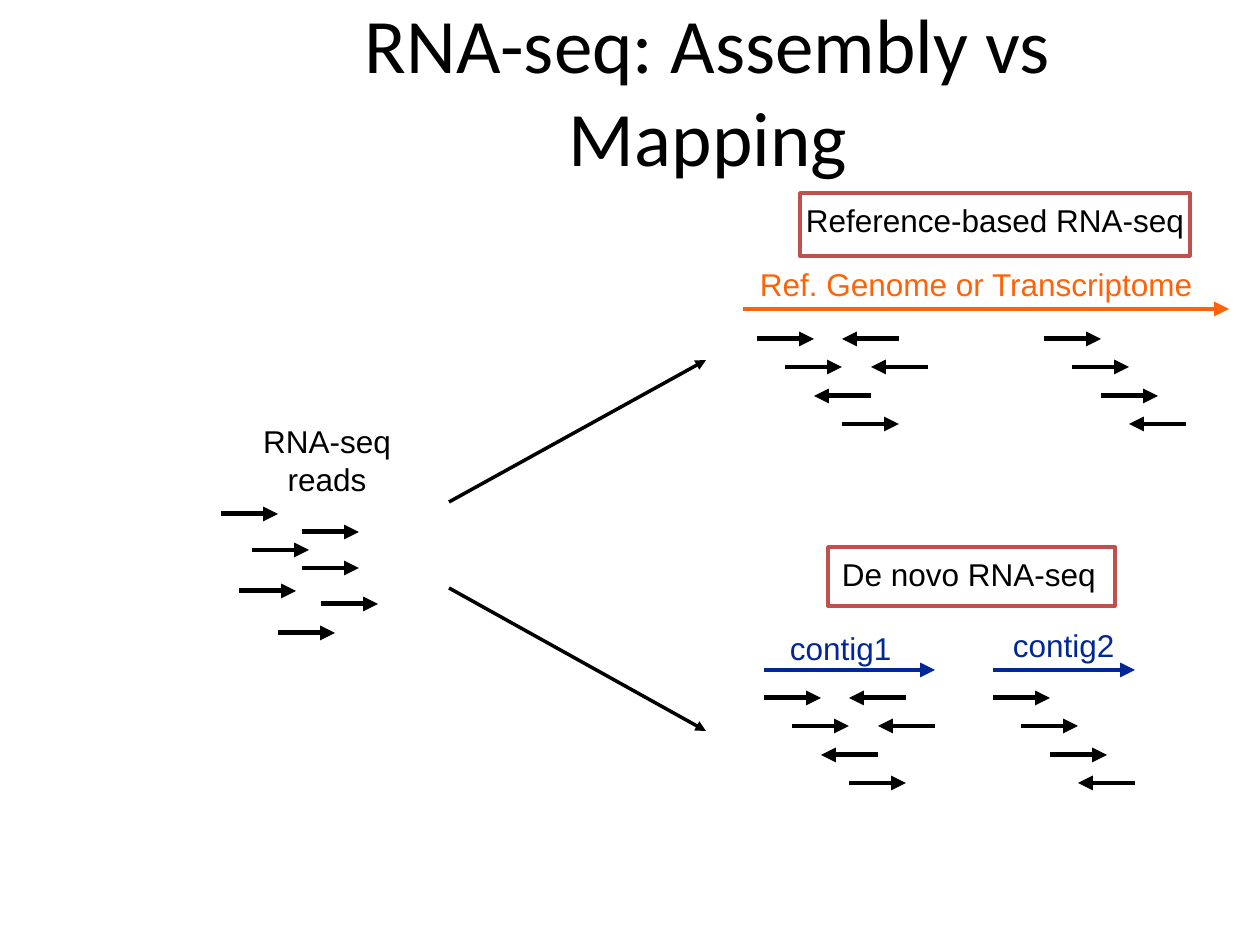
from dataclasses import dataclass

from lxml.etree import SubElement
from pptx import Presentation
from pptx.dml.color import RGBColor
from pptx.enum.shapes import MSO_CONNECTOR, MSO_SHAPE
from pptx.enum.text import MSO_ANCHOR, PP_ALIGN
from pptx.oxml.ns import qn
from pptx.util import Emu, Pt

SCALE = 914400 / 126
BLACK = RGBColor(0x00, 0x00, 0x00)
WHITE = RGBColor(0xFF, 0xFF, 0xFF)
BLUE = RGBColor(0x00, 0x27, 0x98)
ORANGE = RGBColor(0xFF, 0x63, 0x09)
RED = RGBColor(0xC0, 0x50, 0x4D)
READ = 57  # length of one read; tiled reads shift by half of it
HAIR = 0  # thinnest line that can be drawn


@dataclass
class Arrow:
    x: int
    y: int
    to_x: int
    to_y: int
    color: RGBColor = BLACK
    width: float = 2.83


@dataclass
class Label:
    text: str
    x: int
    y: int
    w: int
    h: int
    color: RGBColor = BLACK
    align: PP_ALIGN = PP_ALIGN.LEFT
    font: str = "Arial"
    size: int = 18
    anchor: MSO_ANCHOR = MSO_ANCHOR.TOP
    wrap: bool = False
    framed: bool = False


@dataclass
class Tile:
    col: int
    row: int
    back: bool = False


def px(n: int) -> Emu:
    return Emu(round(n * SCALE))


def draw_arrow(shapes, arrow: Arrow) -> None:
    line = shapes.add_connector(
        MSO_CONNECTOR.STRAIGHT,
        px(arrow.x), px(arrow.y), px(arrow.to_x), px(arrow.to_y))
    line.line.color.rgb = arrow.color
    line.line.width = Pt(arrow.width)
    SubElement(line.line._get_or_add_ln(), qn("a:tailEnd"), type="triangle")
    SubElement(line._element.spPr, qn("a:effectLst"))


def draw_label(shapes, label: Label) -> None:
    spot = [px(n) for n in (label.x, label.y, label.w, label.h)]
    if label.framed:
        box = shapes.add_shape(MSO_SHAPE.RECTANGLE, *spot)
        box.shadow.inherit = False
        box.fill.solid()
        box.fill.fore_color.rgb = WHITE
        box.line.color.rgb = RED
        box.line.width = Pt(2)
    else:
        box = shapes.add_textbox(*spot)
    frame = box.text_frame
    form = {
        "text": label.text, "word_wrap": label.wrap,
        "vertical_anchor": label.anchor,
        "margin_left": px(14), "margin_right": px(14),
        "margin_top": px(8), "margin_bottom": px(8),
    }
    for key, value in form.items():
        setattr(frame, key, value)
    for para in frame.paragraphs:
        para.alignment = label.align
        for key, value in {"name": label.font, "size": Pt(label.size)}.items():
            setattr(para.font, key, value)
        para.font.color.rgb = label.color


def draw_tiles(shapes, x: int, y: int, tiles: list[Tile]) -> None:
    """Draw staggered reads whose first one starts at x, y."""
    for tile in tiles:
        start = x + tile.col * READ // 2
        end = start + READ
        if tile.back:
            start, end = end, start
        level = y + tile.row * READ // 2
        draw_arrow(shapes, Arrow(start, level, end, level))


LEFT_TILES = [Tile(0, 0), Tile(1, 1), Tile(3, 0, True),
              Tile(2, 2, True), Tile(3, 3), Tile(4, 1, True)]
RIGHT_TILES = [Tile(0, 0), Tile(1, 1), Tile(2, 2), Tile(3, 3, True)]

LOOSE = [(278, 633), (321, 604), (302, 532), (252, 550),
         (302, 568), (239, 591), (221, 514)]
PATHS = [Arrow(449, 502, 706, 360, width=HAIR),
         Arrow(449, 588, 706, 731, width=HAIR)]
READS = Label("RNA-seq\nreads", 241, 414, 172, 78, align=PP_ALIGN.CENTER)
TITLE = Label("RNA-seq: Assembly vs Mapping", 219, 10, 978, 158,
              align=PP_ALIGN.CENTER, font="Calibri", size=44,
              anchor=MSO_ANCHOR.MIDDLE, wrap=True)


@dataclass
class Method:
    arrows: list[Arrow]
    labels: list[Label]
    left: int
    right: int
    top: int


METHODS = [
    Method(
        [Arrow(764, 670, 935, 670, BLUE), Arrow(993, 670, 1135, 670, BLUE)],
        [Label("contig1", 776, 621, 140, 48, BLUE),
         Label("contig2", 999, 618, 140, 48, BLUE),
         Label("De novo RNA-seq", 828, 547, 287, 59, framed=True)],
        764, 993, 698),
    Method(
        [Arrow(743, 309, 1229, 309, ORANGE)],
        [Label("Ref. Genome or Transcriptome", 746, 257, 480, 48, ORANGE),
         Label("Reference-based RNA-seq", 800, 193, 390, 63,
               align=PP_ALIGN.CENTER, framed=True)],
        757, 1044, 339),
]


def draw_method(shapes, method: Method) -> None:
    group = shapes.add_group_shape().shapes
    draw_tiles(group, method.left, method.top, LEFT_TILES)
    draw_tiles(group, method.right, method.top, RIGHT_TILES)
    for arrow in method.arrows:
        draw_arrow(group, arrow)
    for label in method.labels:
        draw_label(group, label)


def main() -> None:
    deck = Presentation()
    deck.slide_width, deck.slide_height = px(1260), px(945)
    shapes = deck.slides.add_slide(deck.slide_layouts[6]).shapes
    for x, y in LOOSE:
        draw_arrow(shapes, Arrow(x, y, x + READ, y))
    draw_label(shapes, READS)
    for path in PATHS:
        draw_arrow(shapes, path)
    for method in METHODS:
        draw_method(shapes, method)
    draw_label(shapes, TITLE)
    deck.save("out.pptx")


if __name__ == "__main__":
    main()
